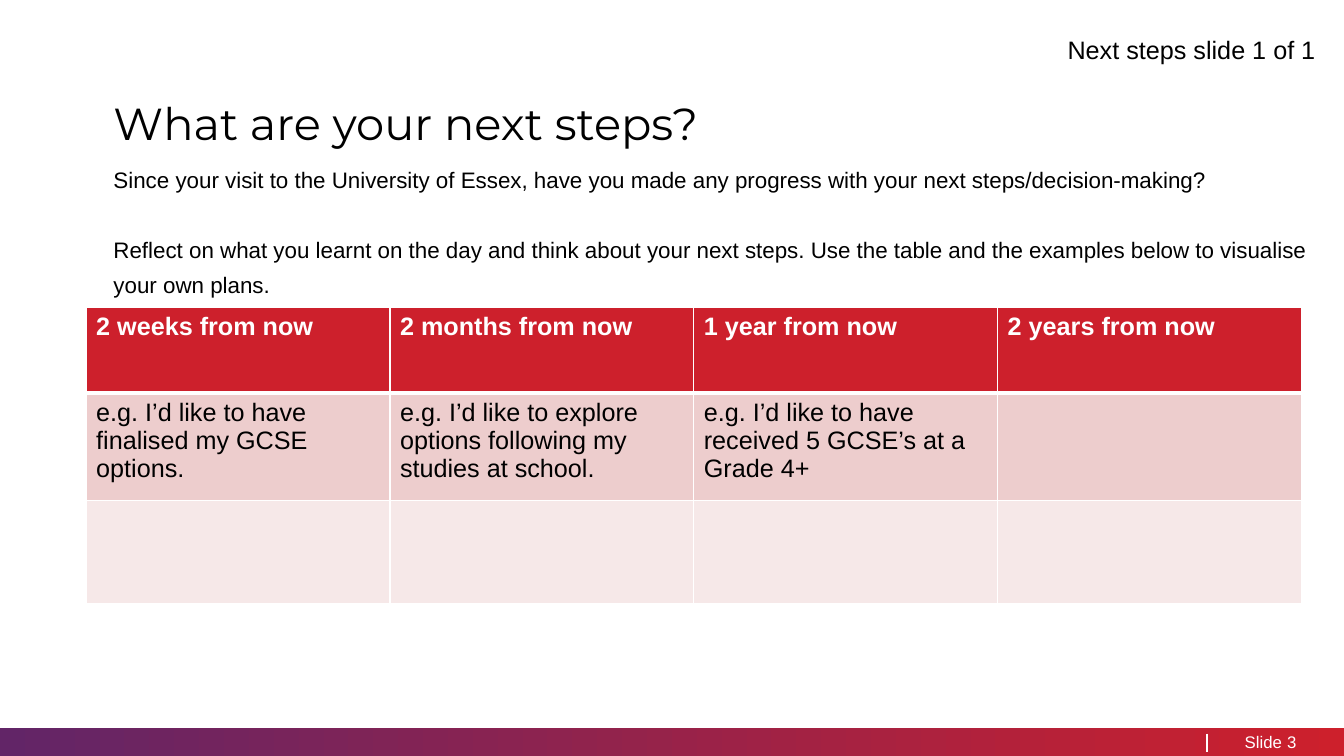
from lxml.etree import SubElement
from pptx import Presentation
from pptx.dml.color import RGBColor
from pptx.enum.shapes import MSO_CONNECTOR, MSO_SHAPE
from pptx.enum.text import MSO_ANCHOR, MSO_AUTO_SIZE, PP_ALIGN
from pptx.oxml.ns import qn
from pptx.util import Cm, Pt

LABEL = "Next steps slide 1 of 1"
HEADING = ["What are your next steps?"]
INTRODUCTION = [
    "Since your visit to the University of Essex, have you made any progress "
    "with your next steps/decision-making?",
    "Reflect on what you learnt on the day and think about your next steps. "
    "Use the table and the examples below to visualise your own plans.",
]
PLAN = [
    ["2 weeks from now", "2 months from now", "1 year from now", "2 years from now"],
    [
        "e.g. I’d like to have finalised my GCSE options.",
        "e.g. I’d like to explore options following my studies at school.",
        "e.g. I’d like to have received 5 GCSE’s at a Grade 4+",
        "",
    ],
    ["", "", "", ""],
]
FOOTER = [  # text, left, width, alignment
    ("Slide", 31.37, 0.94, PP_ALIGN.RIGHT),
    ("3", 32.44, 0.84, PP_ALIGN.LEFT),
]
COLOURS = {
    "purple": "622567", "red": "CD202C", "pink": "EDCDCD",
    "pale": "F6E8E8", "white": "FFFFFF", "black": "000000",
}
ROW_FILLS = ["red", "pink", "pale"]
ROW_HEIGHTS = [2.16, 2.7, 2.6]
WIDTH, HEIGHT = 33.87, 19.05
BAR_HEIGHT = 0.71
BAR_TOP = HEIGHT - BAR_HEIGHT


def colour(name):
    return RGBColor.from_string(COLOURS[name])


def place(shape, left, top, width, height):
    shape.left, shape.top = Cm(left), Cm(top)
    shape.width, shape.height = Cm(width), Cm(height)


def set_frame(frame, anchor, top=0.0, bottom=0.0):
    frame.auto_size = MSO_AUTO_SIZE.NONE
    frame.word_wrap = True
    frame.vertical_anchor = anchor
    frame.margin_left = frame.margin_right = 0
    frame.margin_top, frame.margin_bottom = Cm(top), Cm(bottom)


def format_text(paragraph, size, name="black", font="Arial", bold=False):
    for run in paragraph.runs:
        run.font.name, run.font.size, run.font.bold = font, Pt(size), bold
        run.font.color.rgb = colour(name)


def fill_body(placeholder, lines, size, font, gap=0):
    """Write unbulleted lines, with gap points between paragraphs."""
    frame = placeholder.text_frame
    frame.text = "\n".join(lines)
    for index, paragraph in enumerate(frame.paragraphs):
        properties = paragraph._p.get_or_add_pPr()
        properties.set("marL", "0")
        properties.set("indent", "0")
        SubElement(properties, qn("a:buNone"))
        paragraph.line_spacing = 1.3
        paragraph.space_before = Pt(gap if index else 0)
        format_text(paragraph, size, font=font)


def add_borders(cell, widths):
    properties = cell._tc.get_or_add_tcPr()
    for side, width in zip("LRTB", widths):
        line = SubElement(properties, qn(f"a:ln{side}"), w=str(Pt(width)))
        fill = SubElement(line, qn("a:solidFill"))
        SubElement(fill, qn("a:srgbClr"), val=COLOURS["white"])


def add_plan(slide):
    frame = slide.shapes.add_table(
        len(PLAN), len(PLAN[0]), Cm(2.17), Cm(7.75), Cm(30.63), Cm(sum(ROW_HEIGHTS)))
    table = frame.table
    for row_index, texts in enumerate(PLAN):
        table.rows[row_index].height = Cm(ROW_HEIGHTS[row_index])
        header = row_index == 0
        for column_index, text in enumerate(texts):
            cell = table.cell(row_index, column_index)
            add_borders(cell, (1, 1, 3 if row_index == 1 else 1, 3 if header else 1))
            cell.fill.solid()
            cell.fill.fore_color.rgb = colour(ROW_FILLS[row_index])
            cell.text_frame.text = text
            format_text(cell.text_frame.paragraphs[0], 18,
                        "white" if header else "black", bold=header)


def add_footer(slide):
    bar = slide.shapes.add_shape(
        MSO_SHAPE.RECTANGLE, 0, Cm(BAR_TOP), Cm(WIDTH), Cm(BAR_HEIGHT))
    bar.shadow.inherit = False
    bar.line.fill.background()
    bar.fill.gradient()
    bar.fill.gradient_angle = 0
    for stop, position, name in zip(bar.fill.gradient_stops, (0, 1), ("purple", "red")):
        stop.position = position
        stop.color.rgb = colour(name)

    divider = slide.shapes.add_connector(
        MSO_CONNECTOR.STRAIGHT, Cm(30.42), Cm(18.49), Cm(30.42), Cm(18.95))
    divider.line.color.rgb = colour("white")
    divider.line.width = Pt(1)
    SubElement(divider._element.spPr, qn("a:effectLst"))

    for text, left, width, alignment in FOOTER:
        box = slide.shapes.add_textbox(Cm(left), Cm(BAR_TOP), Cm(width), Cm(BAR_HEIGHT))
        set_frame(box.text_frame, MSO_ANCHOR.MIDDLE, 0.13, 0.13)
        box.text_frame.word_wrap = False
        box.text_frame.text = text
        paragraph = box.text_frame.paragraphs[0]
        paragraph.alignment = alignment
        format_text(paragraph, 12, "white")


def main():
    presentation = Presentation()
    presentation.slide_width, presentation.slide_height = Cm(WIDTH), Cm(HEIGHT)
    slide = presentation.slides.add_slide(
        presentation.slide_layouts.get_by_name("Two Content"))
    title, heading, introduction = slide.placeholders

    place(title, 17.27, 0, 15.88, 2.46)
    set_frame(title.text_frame, MSO_ANCHOR.MIDDLE, bottom=0.2)
    title.text_frame.text = LABEL
    paragraph = title.text_frame.paragraphs[0]
    paragraph.alignment = PP_ALIGN.RIGHT
    paragraph.line_spacing = 1.3
    format_text(paragraph, 18)

    place(heading, 2.86, 1.88, 29.16, 2.06)
    set_frame(heading.text_frame, MSO_ANCHOR.TOP, 0.13, 0.13)
    fill_body(heading, HEADING, 32, "Montserrat")

    place(introduction, 2.86, 3.58, 30.35, 4.78)
    set_frame(introduction.text_frame, MSO_ANCHOR.TOP, 0.41)
    fill_body(introduction, INTRODUCTION, 16, "Arial", gap=25)

    add_plan(slide)
    add_footer(slide)
    presentation.save("out.pptx")


if __name__ == "__main__":
    main()
